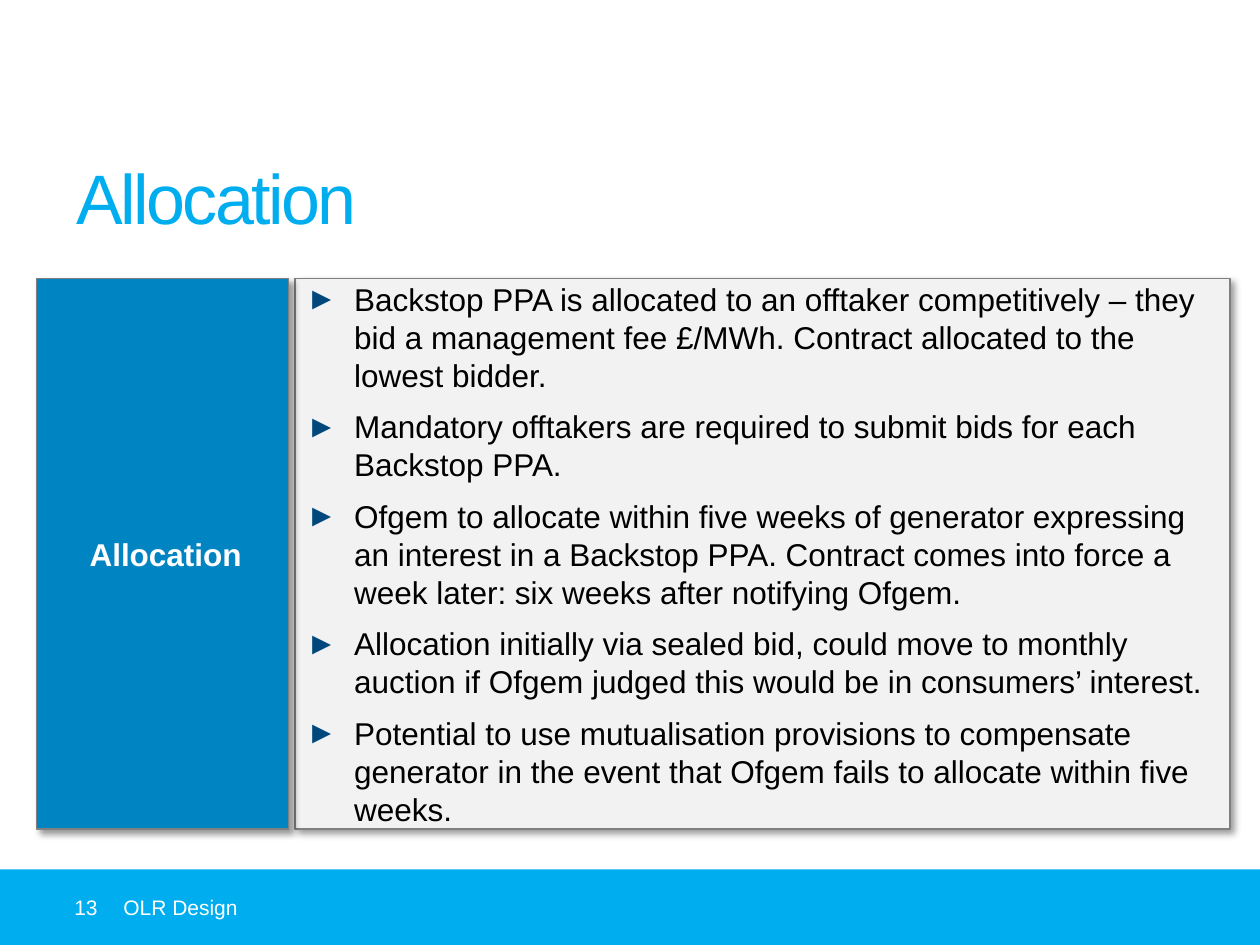
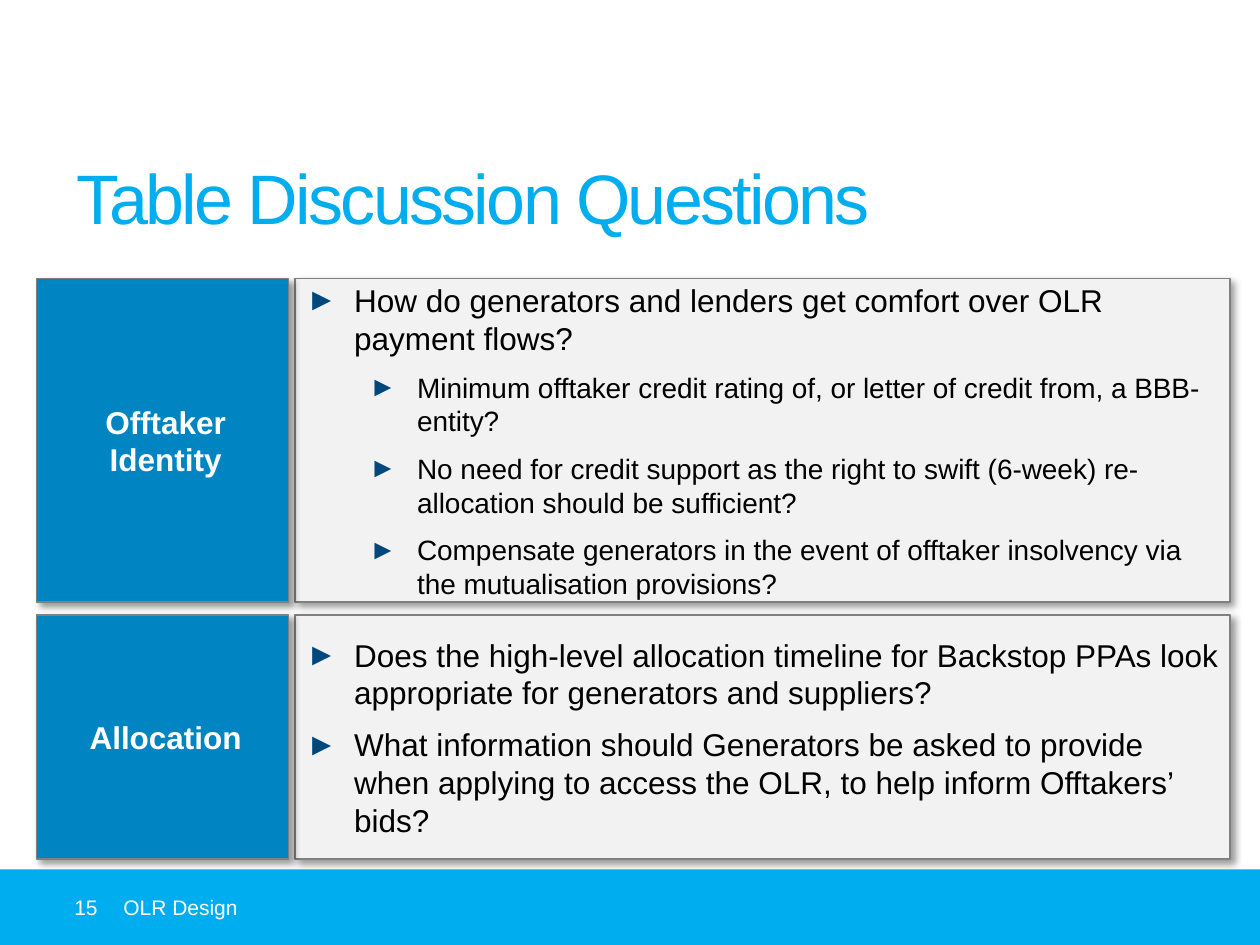
from lxml import etree
from pptx import Presentation
from pptx import util as u
from pptx.dml import color
from pptx.enum import shapes, text
from pptx.oxml import ns

SLIDES = [
    dict(title="Allocation", page="13", layout=1, rows=[
        ("Allocation", 4.37, [
            (0, "Backstop PPA is allocated to an offtaker competitively – they bid a management fee £/MWh. Contract allocated to the lowest bidder."),
            (0, "Mandatory offtakers are required to submit bids for each Backstop PPA."),
            (0, "Ofgem to allocate within five weeks of generator expressing an interest in a Backstop PPA. Contract comes into force a week later: six weeks after notifying Ofgem."),
            (0, "Allocation initially via sealed bid, could move to monthly auction if Ofgem judged this would be in consumers’ interest."),
            (0, "Potential to use mutualisation provisions to compensate generator in the event that Ofgem fails to allocate within five weeks."),
        ]),
    ]),
    dict(title="Table Discussion Questions", page="15", layout=3, rows=[
        ("Offtaker Identity", 2.57, [
            (0, "How do generators and lenders get comfort over OLR payment flows?"),
            (1, "Minimum offtaker credit rating of, or letter of credit from, a BBB- entity?"),
            (1, "No need for credit support as the right to swift (6-week) re-allocation should be sufficient?"),
            (1, "Compensate generators in the event of offtaker insolvency via the mutualisation provisions?"),
        ]),
        ("Allocation", 1.94, [
            (0, "Does the high-level allocation timeline for Backstop PPAs look appropriate for generators and suppliers?"),
            (0, "What information should Generators be asked to provide when applying to access the OLR, to help inform Offtakers’ bids?"),
        ]),
    ]),
]
FOOT = "OLR Design"
WIDE, HIGH = 10, 7.5
BAND = 0.08 * HIGH
TOP, GAP = 2.21, 0.1
LABEL = (0.29, 2)
PANEL = (2.34, 7.42)
SKY, BLUE, NAVY = "00AEEF", "0084C2", "00487C"
PALE, GREY, WHITE, BLACK = "F2F2F2", "808080", "FFFFFF", "000000"
SIZES, MARGINS = (18, 16), (0.39, 0.89)
HANG = -0.38
PAD = (0.08, 0.08, 0.08, 0.08)


def rgb(code):
    return color.RGBColor.from_string(code)


def apply(item, **vals):
    for key, val in vals.items():
        setattr(item, key, val)


def sub(node, tag, **vals):
    return etree.SubElement(node, ns.qn("a:" + tag), **vals)


def place(shape, left, top, width, height):
    spots = dict(left=left, top=top, width=width, height=height)
    apply(shape, **{key: u.Inches(val) for key, val in spots.items()})


def frame(shape, pad, anchor=text.MSO_ANCHOR.MIDDLE):
    sides = ("margin_left", "margin_top", "margin_right", "margin_bottom")
    apply(shape.text_frame, word_wrap=True, auto_size=text.MSO_AUTO_SIZE.NONE,
          vertical_anchor=anchor, **dict(zip(sides, map(u.Inches, pad))))


def write(para, words, size, tint, bold=False, left=0, hang=0, mark=False, **form):
    props = para._p.get_or_add_pPr()
    props.set("marL", str(u.Inches(left)))
    props.set("indent", str(u.Inches(hang)))
    if mark:
        sub(sub(props, "buClr"), "srgbClr", val=NAVY)
        sub(props, "buFont", typeface="Arial")
        sub(props, "buChar", char="►")
    base = dict(alignment=text.PP_ALIGN.LEFT, line_spacing=1.0,
                space_before=u.Pt(0), space_after=u.Pt(0))
    apply(para, **{**base, **form})
    run = para.add_run()
    run.text = words
    apply(run.font, name="Arial", size=u.Pt(size), bold=bold)
    run.font.color.rgb = rgb(tint)
    return run


def paint(shape, fill, edge=None):
    shape.shadow.inherit = False
    shape.fill.solid()
    shape.fill.fore_color.rgb = rgb(fill)
    if not edge:
        shape.line.fill.background()
        return
    shape.line.color.rgb = rgb(edge)
    shape.line.width = u.Pt(1)
    glow = sub(shape._element.spPr.find(ns.qn("a:effectLst")), "outerShdw",
               blurRad=str(u.Pt(4)), dist=str(u.Pt(3)), dir="2700000",
               algn="tl", rotWithShape="0")
    sub(sub(glow, "srgbClr", val=BLACK), "alpha", val="40000")


def block(slide, *spot):
    return slide.shapes.add_shape(shapes.MSO_SHAPE.RECTANGLE, *map(u.Inches, spot))


def head(slide, words):
    title = slide.shapes.title
    place(title, 0.61, 1.23, 8.78, 0.71)
    frame(title, (0, 0, 0, 0), text.MSO_ANCHOR.TOP)
    run = write(title.text_frame.paragraphs[0], words, 40, SKY)
    run._r.get_or_add_rPr().set("spc", "-150")


def foot(slide, page):
    band = block(slide, 0, HIGH - BAND, WIDE, BAND)
    paint(band, SKY)
    frame(band, (0, 0, 0.1, 0))
    write(band.text_frame.paragraphs[0], page, 12, WHITE, left=0.59)
    note = slide.shapes.add_textbox(*map(u.Inches, (0.98, HIGH - BAND, 8.43, BAND)))
    frame(note, (0, 0, 0, 0))
    write(note.text_frame.paragraphs[0], FOOT, 12, WHITE)


def fill_row(slide, panel, top, name, tall, points):
    place(panel, PANEL[0], top, PANEL[1], tall)
    paint(panel, PALE, GREY)
    frame(panel, PAD)
    body = panel.text_frame
    for i, (level, words) in enumerate(points):
        para = body.add_paragraph() if i else body.paragraphs[0]
        write(para, words, SIZES[level], BLACK, left=MARGINS[level], hang=HANG,
              mark=True, level=level, space_before=u.Pt(8 if i else 0))
    label = block(slide, LABEL[0], top, LABEL[1], tall)
    paint(label, BLUE, GREY)
    frame(label, (0, *PAD[1:]))
    write(label.text_frame.paragraphs[0], name, 18, WHITE, bold=True, left=0.13,
          alignment=text.PP_ALIGN.CENTER)


def main():
    deck = Presentation()
    apply(deck, slide_width=u.Inches(WIDE), slide_height=u.Inches(HIGH))
    for data in SLIDES:
        slide = deck.slides.add_slide(deck.slide_layouts[data["layout"]])
        head(slide, data["title"])
        foot(slide, data["page"])
        panels = list(slide.placeholders)[1:]
        top = TOP
        for panel, (name, tall, points) in zip(panels, data["rows"]):
            fill_row(slide, panel, top, name, tall, points)
            top += tall + GAP
    deck.save("out.pptx")


if __name__ == "__main__":
    main()
